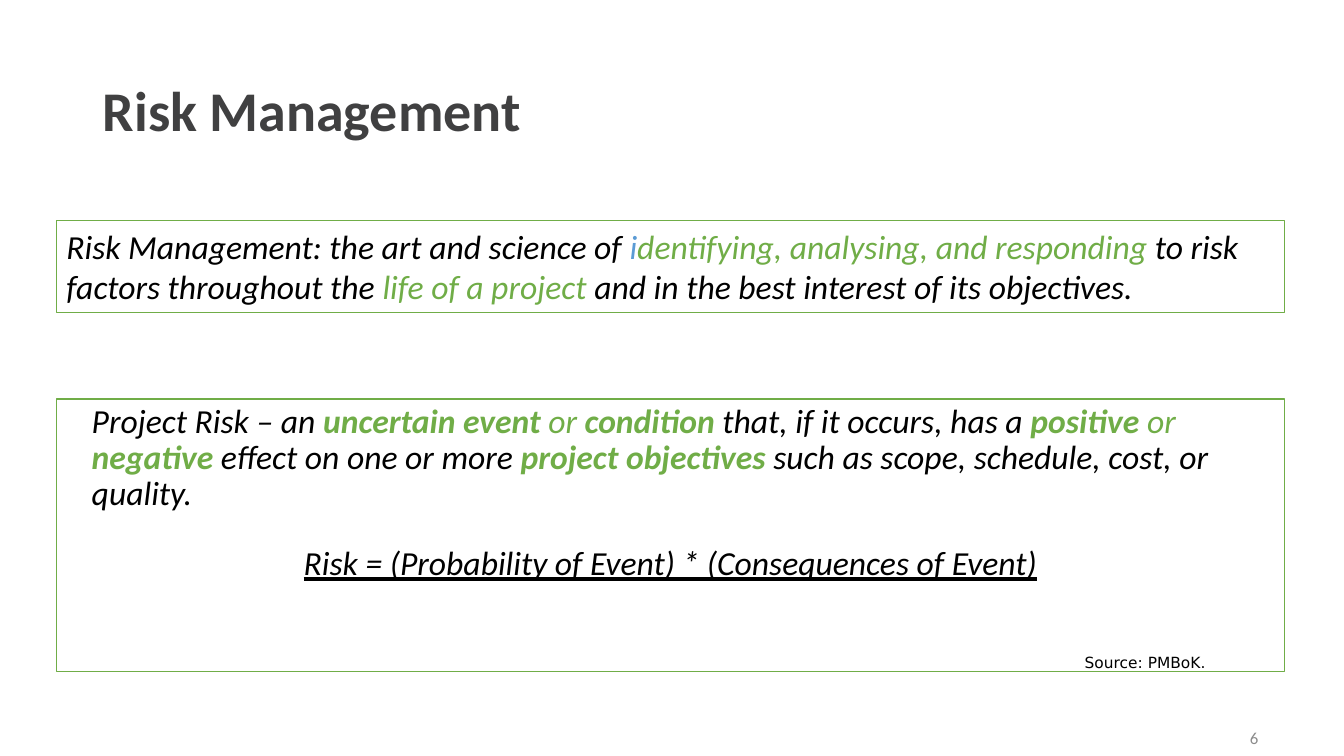
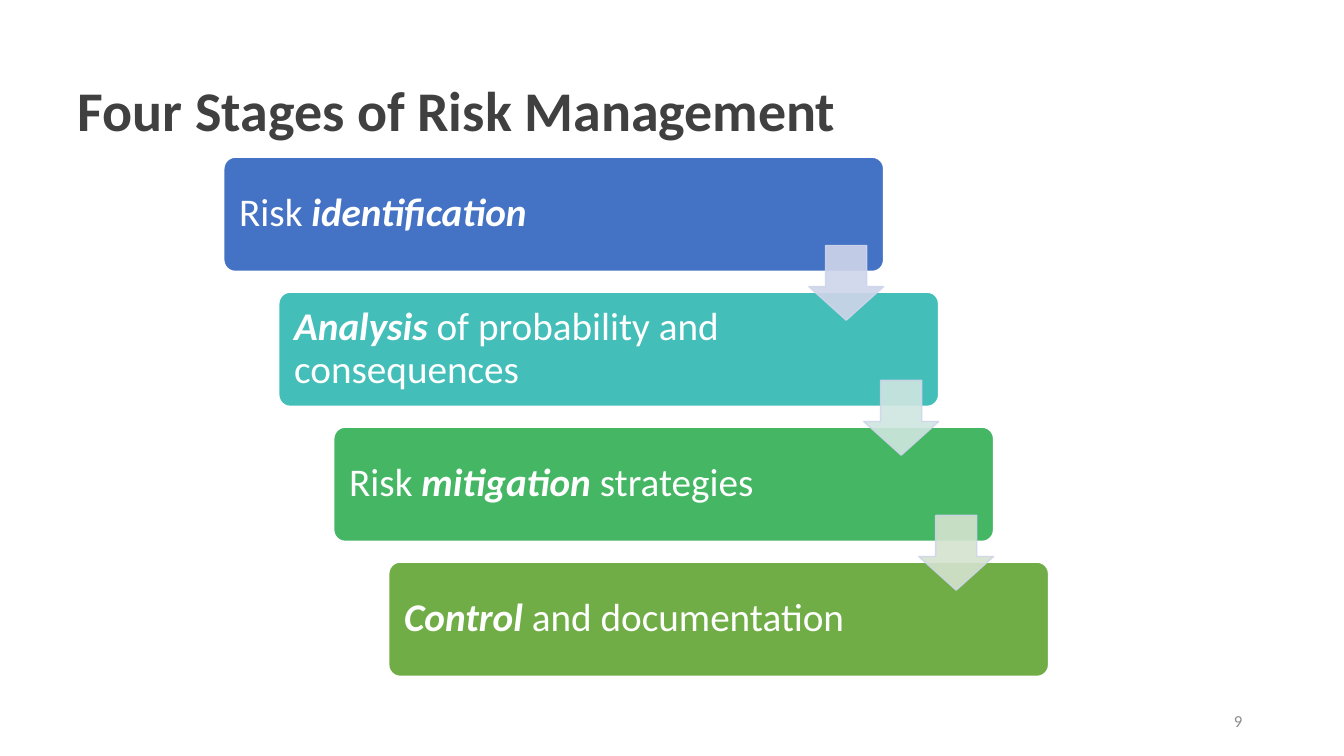
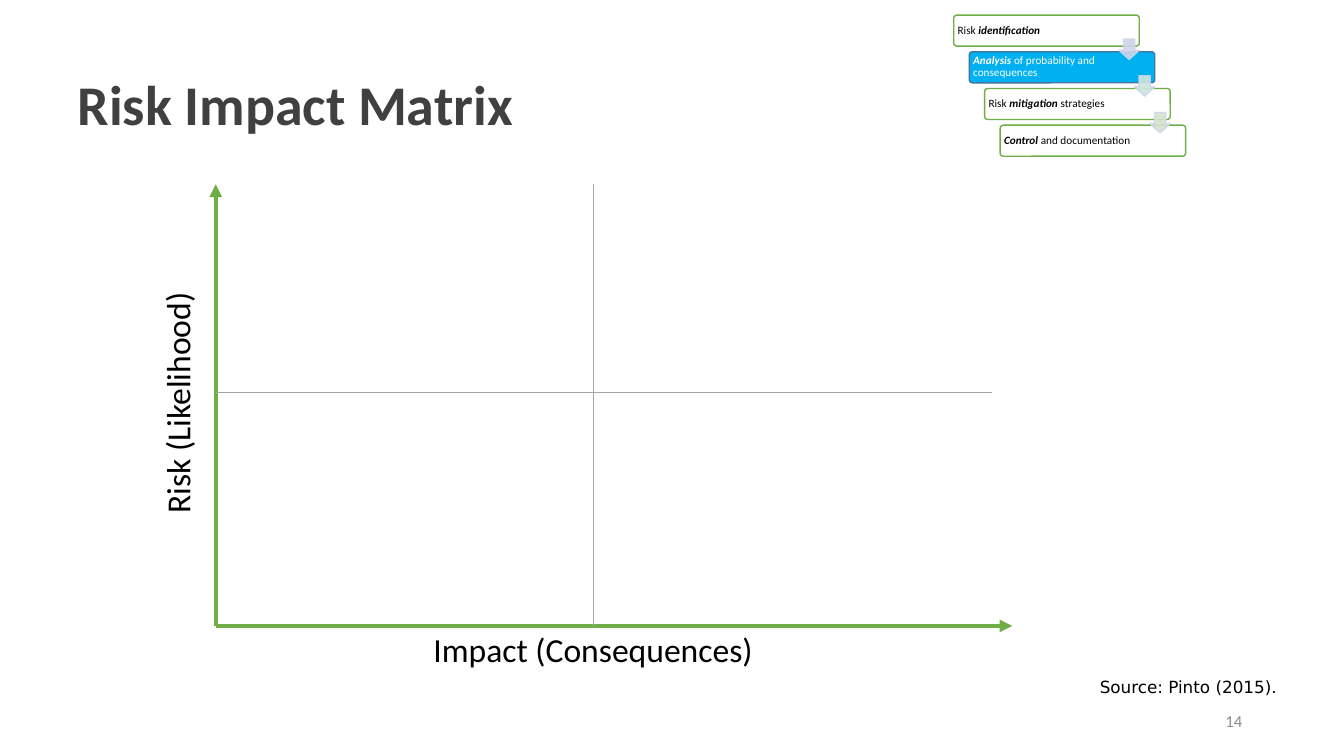
import lxml.etree
import pptx
import pptx.dml.color
import pptx.enum.shapes
import pptx.enum.text
import pptx.oxml.ns
import pptx.util

Inches = pptx.util.Inches
Pt = pptx.util.Pt
qn = pptx.oxml.ns.qn
ALIGN = pptx.enum.text.PP_ALIGN
ANCHOR = pptx.enum.text.MSO_ANCHOR
SHAPE = pptx.enum.shapes.MSO_SHAPE

# Shared look
FONT, SOURCE_FONT = "Calibri", "DejaVu Sans"
BLACK, WHITE, GREEN, BLUE = "000000", "FFFFFF", "70AD47", "5B9BD5"
TITLE_GREY, NUMBER_GREY, GRID_GREY = "404041", "8C8C8C", "A5A5A5"
ARROW_LINE = "CFD5EA"
TITLE_ONLY, TITLE_AND_BODY = 5, 1

# Each span is (text, flags: b, i, u) with an optional colour
STAGES = [
    [("Risk ", ""), ("identification", "bi")],
    [("Analysis", "bi"), (" of probability and consequences", "")],
    [("Risk ", ""), ("mitigation", "bi"), (" strategies", "")],
    [("Control", "bi"), (" and documentation", "")],
]
ARROW_FILLS = ["CFD5EA", "CFE6E0", "D5E3CF"]
# Stage styles: fill, line, text
FULL_STYLES = [(fill, WHITE, WHITE)
               for fill in ("4472C4", "43BEB9", "45B664", GREEN)]
PLAIN_STYLE = (WHITE, GREEN, BLACK)
CURRENT_STYLE = ("00B0F0", "43739E", WHITE)

DEFINITION = [
    ("Risk Management: the art and science of ", "i"),
    ("i", "i", BLUE),
    ("dentifying, analysing, and responding ", "i", GREEN),
    ("to risk factors throughout the ", "i"),
    ("life of a project ", "i", GREEN),
    ("and in the best interest of its objectives.", "i"),
]
PROJECT_RISK = [
    ("Project Risk – an ", "i"),
    ("uncertain event ", "bi", GREEN),
    ("or ", "i", GREEN),
    ("condition ", "bi", GREEN),
    ("that, if it occurs, has a ", "i"),
    ("positive", "bi", GREEN),
    (" or ", "i", GREEN),
    ("negative ", "bi", GREEN),
    ("effect on one or more ", "i"),
    ("project objectives ", "bi", GREEN),
    ("such as scope, schedule, cost, or quality.", "i"),
]
FORMULA = [("Risk = (Probability of Event) * (Consequences of Event)", "iu")]


def rgb(value):
    return pptx.dml.color.RGBColor.from_string(value)


def inches(box):
    return [Inches(length) for length in box]


def write(para, spans, size, color=BLACK, font=FONT):
    """Add formatted spans to a paragraph."""
    for text, flags, *own_color in spans:
        span = para.add_run()
        span.text = text
        span.font.name = font
        span.font.size = Pt(size)
        span.font.bold = "b" in flags
        span.font.italic = "i" in flags
        span.font.underline = "u" in flags
        span.font.color.rgb = rgb(own_color[0] if own_color else color)


def outline(shape, fill, line):
    shape.fill.solid()
    shape.fill.fore_color.rgb = rgb(fill)
    shape.line.color.rgb = rgb(line)
    shape.line.width = Pt(1)


def place(shape, box):
    shape.left, shape.top, shape.width, shape.height = inches(box)


def add_shape(shapes, kind, box, fill, line, adjustments=()):
    shape = shapes.add_shape(kind, *inches(box))
    shape.shadow.inherit = False
    outline(shape, fill, line)
    for index, value in enumerate(adjustments):
        shape.adjustments[index] = value
    return shape


def add_text(page, box, text, size, color=BLACK, font=FONT,
             align=ALIGN.LEFT, anchor=ANCHOR.TOP):
    label = page.shapes.add_textbox(*inches(box))
    label.text_frame.word_wrap = True
    label.text_frame.vertical_anchor = anchor
    para = label.text_frame.paragraphs[0]
    para.alignment = align
    write(para, [(text, "")], size, color, font)
    return label


def add_page(deck, layout, title, title_box, number, number_box):
    """Start a slide with its title and slide number."""
    page = deck.slides.add_slide(deck.slide_layouts[layout])
    heading = page.shapes.title
    place(heading, title_box)
    frame = heading.text_frame
    frame.auto_size = pptx.enum.text.MSO_AUTO_SIZE.NONE
    frame.vertical_anchor = ANCHOR.MIDDLE
    para = frame.paragraphs[0]
    para.alignment = ALIGN.LEFT
    para.line_spacing = 0.9
    write(para, [(title, "b")], 40, TITLE_GREY)
    add_text(page, number_box, number, 12, NUMBER_GREY,
             align=ALIGN.RIGHT, anchor=ANCHOR.MIDDLE)
    return page


def add_definition(page, box):
    panel = add_shape(page.shapes, SHAPE.RECTANGLE, box, WHITE, GREEN)
    panel.text_frame.word_wrap = True
    panel.text_frame.vertical_anchor = ANCHOR.TOP
    para = panel.text_frame.paragraphs[0]
    para.alignment = ALIGN.LEFT
    write(para, DEFINITION, 24)


def add_project_risk(page, box):
    """Fill the body placeholder with the risk definition and formula."""
    body = page.placeholders[1]
    place(body, box)
    outline(body, WHITE, GREEN)
    frame = body.text_frame
    frame.auto_size = pptx.enum.text.MSO_AUTO_SIZE.NONE
    rows = [(PROJECT_RISK, ALIGN.LEFT, 0.25, 0), (FORMULA, ALIGN.CENTER, 0, 24)]
    for index, (spans, align, margin, space) in enumerate(rows):
        para = frame.add_paragraph() if index else frame.paragraphs[0]
        properties = para._p.get_or_add_pPr()
        properties.set("marL", str(Inches(margin)))
        properties.set("indent", "0")
        lxml.etree.SubElement(properties, qn("a:buNone"))
        para.alignment = align
        para.line_spacing = 0.9
        para.space_before = Pt(space)
        write(para, spans, 24)


def add_staircase(page, box, styles, size, inset):
    """Draw the four stages as descending steps joined by arrows."""
    left, top, width, height = box
    step_width, step_height = 0.8 * width, 0.22 * height
    shift, pitch = 0.2 * width / 3, 0.26 * height
    arrow_size = 0.144 * height
    group = page.shapes.add_group_shape()

    # Steps
    for index, (spans, (fill, line, color)) in enumerate(zip(STAGES, styles)):
        step = add_shape(
            group.shapes, SHAPE.ROUNDED_RECTANGLE,
            (left + index * shift, top + index * pitch, step_width, step_height),
            fill, line, [0.1])
        frame = step.text_frame
        frame.word_wrap = True
        frame.vertical_anchor = ANCHOR.MIDDLE
        frame.margin_left = frame.margin_top = frame.margin_bottom = Inches(inset)
        frame.margin_right = Inches(inset + 0.19 * step_width)
        para = frame.paragraphs[0]
        para.alignment = ALIGN.LEFT
        para.line_spacing = 0.9
        write(para, spans, size, color)

    # Arrows
    for index, fill in enumerate(ARROW_FILLS):
        arrow = add_shape(
            group.shapes, SHAPE.DOWN_ARROW,
            (left + index * shift + step_width - arrow_size,
             top + index * pitch + 0.17 * height, arrow_size, arrow_size),
            fill, ARROW_LINE, [0.55, 0.45])
        for color in arrow.element.spPr.iter(qn("a:srgbClr")):
            lxml.etree.SubElement(color, qn("a:alpha")).set("val", "90000")


def add_line(shapes, start, end, color, width, arrow=False):
    line = shapes.add_connector(pptx.enum.shapes.MSO_CONNECTOR.STRAIGHT,
                                *inches(start + end))
    line.line.color.rgb = rgb(color)
    line.line.width = Pt(width)
    properties = line.element.spPr
    if arrow:
        tip = lxml.etree.SubElement(properties.find(qn("a:ln")), qn("a:tailEnd"))
        tip.set("type", "triangle")
    lxml.etree.SubElement(properties, qn("a:effectLst"))


def add_matrix(page, box):
    """Draw the two axes, the quadrant lines and the axis labels."""
    left, top, width, height = box
    bottom = top + height
    middle_x, middle_y = left + 3.75, top + 2.06
    shapes = page.shapes.add_group_shape().shapes
    add_line(shapes, (left, bottom), (left + width, bottom), GREEN, 3, True)
    add_line(shapes, (left, bottom), (left, top), GREEN, 3, True)
    add_line(shapes, (middle_x, top), (middle_x, bottom), GRID_GREY, 0.5)
    add_line(shapes, (left, middle_y), (left + width - 0.2, middle_y),
             GRID_GREY, 0.5)
    add_text(page, (left + 2.06, bottom - 0.02, 4.08, 0.5),
             "Impact (Consequences)", 24)
    likelihood = add_text(page, (left - 1.69, top + 1.81, 2.61, 0.5),
                          "Risk (Likelihood)", 24)
    likelihood.rotation = 270


def add_source(page, box, text, size):
    add_text(page, box, text, size, font=SOURCE_FONT)


def main():
    deck = pptx.Presentation()
    deck.slide_width, deck.slide_height = Inches(13.33), Inches(7.5)
    number_box = (9.42, 6.95, 3, 0.4)

    # Definitions
    page = add_page(deck, TITLE_AND_BODY, "Risk Management",
                    (0.92, 0.4, 11.5, 1.45), "6", (9.58, 7.12, 3, 0.4))
    add_definition(page, (0.56, 2.19, 12.18, 0.91))
    add_project_risk(page, (0.56, 3.96, 12.18, 2.7))
    add_source(page, (10.66, 6.43, 2, 0.28), "Source: PMBoK.", 11)

    # Four stages
    page = add_page(deck, TITLE_ONLY, "Four Stages of Risk Management",
                    (0.67, 0.5, 12, 1.25), "9", number_box)
    add_staircase(page, (2.22, 1.56, 8.18, 5.15), FULL_STYLES, 28, 0.12)

    # Impact matrix
    page = add_page(deck, TITLE_ONLY, "Risk Impact Matrix",
                    (0.67, 0.44, 12, 1.25), "14", number_box)
    styles = [PLAIN_STYLE, CURRENT_STYLE, PLAIN_STYLE, PLAIN_STYLE]
    add_staircase(page, (9.46, 0.15, 2.3, 1.4), styles, 8, 0.03)
    add_matrix(page, (2.14, 1.83, 7.9, 4.38))
    add_source(page, (10.81, 6.66, 2.4, 0.3), "Source: Pinto (2015).", 12)

    deck.save("out.pptx")


if __name__ == "__main__":
    main()
